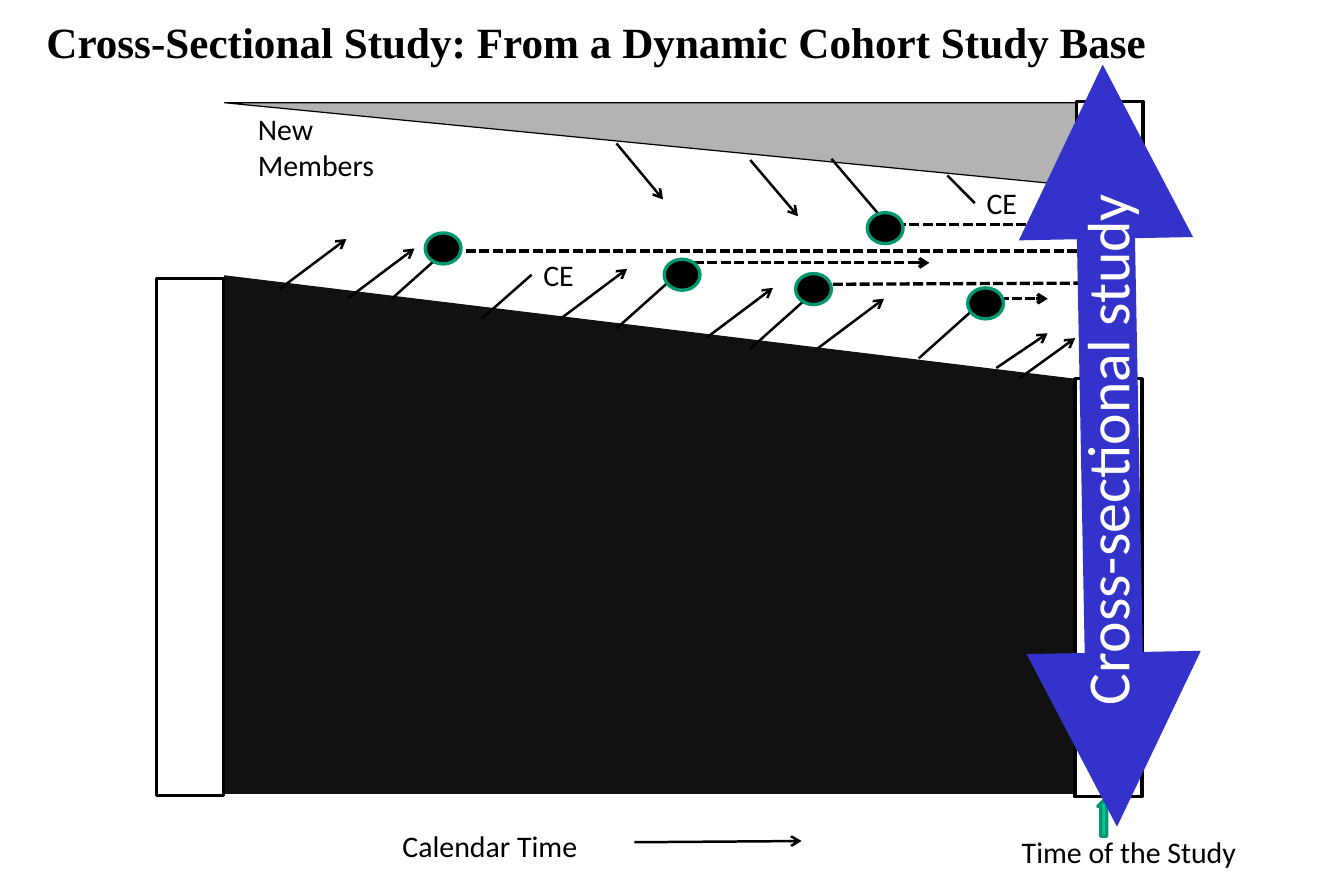
from collections import namedtuple
from pptx import Presentation
from pptx.dml.color import RGBColor
from pptx.enum.dml import MSO_LINE
from pptx.enum.shapes import MSO_CONNECTOR, MSO_SHAPE
from pptx.enum.text import PP_ALIGN
from pptx.oxml.ns import qn
from pptx.util import Inches, Pt
from lxml import etree

BLACK = RGBColor(0x00, 0x00, 0x00)
WHITE = RGBColor(0xFF, 0xFF, 0xFF)
CHARCOAL = RGBColor(0x11, 0x11, 0x11)
GREY = RGBColor(0xB3, 0xB3, 0xB3)
GREEN = RGBColor(0x00, 0xCC, 0x99)
DARK_GREEN = RGBColor(0x00, 0x97, 0x71)
BLUE = RGBColor(0x33, 0x33, 0xCC)

Box = namedtuple("Box", "left top width height")


def add_label(page, box, text, wrap=False, align=PP_ALIGN.LEFT, **font):
    label = page.shapes.add_textbox(*(Inches(v) for v in box))
    label.text_frame.word_wrap = wrap
    para = label.text_frame.paragraphs[0]
    para.alignment = align
    span = para.add_run()
    span.text = text
    span.font.color.rgb = font.pop("color", BLACK)
    for name, value in ({"name": "Calibri", "size": Pt(18)} | font).items():
        setattr(span.font, name, value)
    return label


def add_figure(page, kind, box, fill=None, line=BLACK, width=2):
    figure = page.shapes.add_shape(kind, *(Inches(v) for v in box))
    figure.shadow.inherit = False
    if fill is None:
        figure.fill.background()
    else:
        figure.fill.solid()
        figure.fill.fore_color.rgb = fill
    figure.line.color.rgb = line
    figure.line.width = Pt(width)
    return figure


def add_line(page, x, y, dx, dy, color=BLACK, width=1.5, dash=None, **ends):
    """Draw a line from (x, y); ends may give headEnd and tailEnd types."""
    line = page.shapes.add_connector(
        MSO_CONNECTOR.STRAIGHT, *(Inches(v) for v in (x, y, x + dx, y + dy)))
    line.line.color.rgb = color
    line.line.width = Pt(width)
    if dash:
        line.line.dash_style = dash
    outline = line.line._get_or_add_ln()
    for end, kind in ends.items():
        etree.SubElement(outline, qn(f"a:{end}"), type=kind)
    etree.SubElement(line._element.spPr, qn("a:effectLst"))


def add_title(page, box):
    add_label(page, box, "Cross-Sectional Study: From a Dynamic Cohort Study Base",
              name="Times New Roman", size=Pt(26), bold=True)


def add_cohort(page, box):
    def within(x, y, width, height):
        return Box(box.left + x, box.top + y, width, height)

    # Study base, its end bars and the wedge of new members
    base = add_figure(page, MSO_SHAPE.FLOWCHART_MANUAL_INPUT,
                      within(0, 1.45, box.width, 4.33), CHARCOAL, CHARCOAL, 0.75)
    base._element.spPr.find(qn("a:xfrm")).set("flipH", "1")
    for x, y, height in ((box.width, 2.31, 3.5), (-0.57, 1.47, 4.33)):
        add_figure(page, MSO_SHAPE.RECTANGLE, within(x, y, 0.56, height))
    wedge = add_figure(page, MSO_SHAPE.RIGHT_TRIANGLE,
                       within(0, 0, 7.69, 0.75), GREY, width=0.75)
    wedge.rotation = 180
    add_figure(page, MSO_SHAPE.RECTANGLE, within(7.13, -0.01, 0.56, 0.73), WHITE)

    # Members leaving the base or the wedge
    leavers = [(x, y, 0.56, -0.42) for x, y in (
        (0.46, 1.56), (1.03, 1.64), (2.81, 1.81), (4.03, 1.97), (4.96, 2.06))]
    leavers += [(6.46, 2.22, 0.43, -0.29), (6.65, 2.31, 0.47, -0.34),
                (3.28, 0.34, 0.39, 0.47), (4.4, 0.48, 0.4, 0.47)]
    for leaver in leavers:
        add_line(page, *within(*leaver), tailEnd="arrow")

    # Members who become cases or competing events
    cases = [(x, y, 0.47, -0.42) for x, y in (
        (1.4, 1.64), (3.28, 1.89), (4.4, 2.06), (5.81, 2.14))]
    cases += [(5.08, 0.47, 0.41, 0.48), (2.15, 1.81, 0.42, -0.37),
              (6.05, 0.61, 0.23, 0.23)]
    for case in cases:
        add_line(page, *within(*case))

    # Duration of each case, then its marker
    for x, y, dx, dy, ends in (
            (3.93, 1.34, 1.97, 0, {"tailEnd": "arrow"}),
            (2.02, 1.24, 5.53, 0, {}),
            (4.98, 1.52, 2.23, -0.01, {}),
            (6.48, 1.64, 0.41, 0, {"tailEnd": "arrow"}),
            (5.62, 1.02, 1.64, 0, {})):
        add_line(page, *within(x, y, dx, dy), width=2,
                 dash=MSO_LINE.SQUARE_DOT, **ends)
    for x, y in ((1.68, 1.09), (5.38, 0.92), (3.68, 1.31), (4.78, 1.43), (6.22, 1.55)):
        add_figure(page, MSO_SHAPE.OVAL, within(x, y, 0.3, 0.26), BLACK, DARK_GREEN)

    # Labels
    add_label(page, within(0.18, 0.02, 1.5, 0.71), "New Members", wrap=True)
    for x, y in ((2.57, 1.24), (6.28, 0.64)):
        add_label(page, within(x, y, 0.46, 0.4), "CE")


def add_time_axis(page, box):
    add_label(page, Box(box.left, box.top, 1.86, box.height), "Calendar Time")
    add_line(page, box.left + 2.04, box.top + 0.17, 1.4, -0.01, tailEnd="arrow")
    add_label(page, Box(box.left + 5.04, box.top + 0.05, 2.28, box.height),
              "Time of the Study", wrap=True, align=PP_ALIGN.CENTER)
    add_figure(page, MSO_SHAPE.UP_ARROW,
               Box(box.left + 5.92, box.top - 0.18, 0.1, 0.3), GREEN, DARK_GREEN)


def add_study_arrow(page, box):
    add_line(page, *box, color=BLUE, width=35, headEnd="triangle", tailEnd="triangle")
    width, height = 4.52, 0.71
    center_x, center_y = box.left + 0.03, box.top + 3.2
    label = add_label(
        page, Box(center_x - width / 2, center_y - height / 2, width, height),
        "Cross-sectional study", size=Pt(36), color=WHITE)
    label.rotation = 270


def main():
    deck = Presentation()
    deck.slide_width, deck.slide_height = Inches(11.25), Inches(7.5)
    page = deck.slides.add_slide(deck.slide_layouts[6])
    add_cohort(page, Box(1.88, 0.86, 7.12, 5.81))
    add_time_axis(page, Box(3.27, 6.88, 7.32, 0.4))
    add_title(page, Box(0.29, 0.08, 9.5, 0.54))
    add_study_arrow(page, Box(9.23, 0.54, 0.12, 6.38))
    deck.save("out.pptx")


if __name__ == "__main__":
    main()
